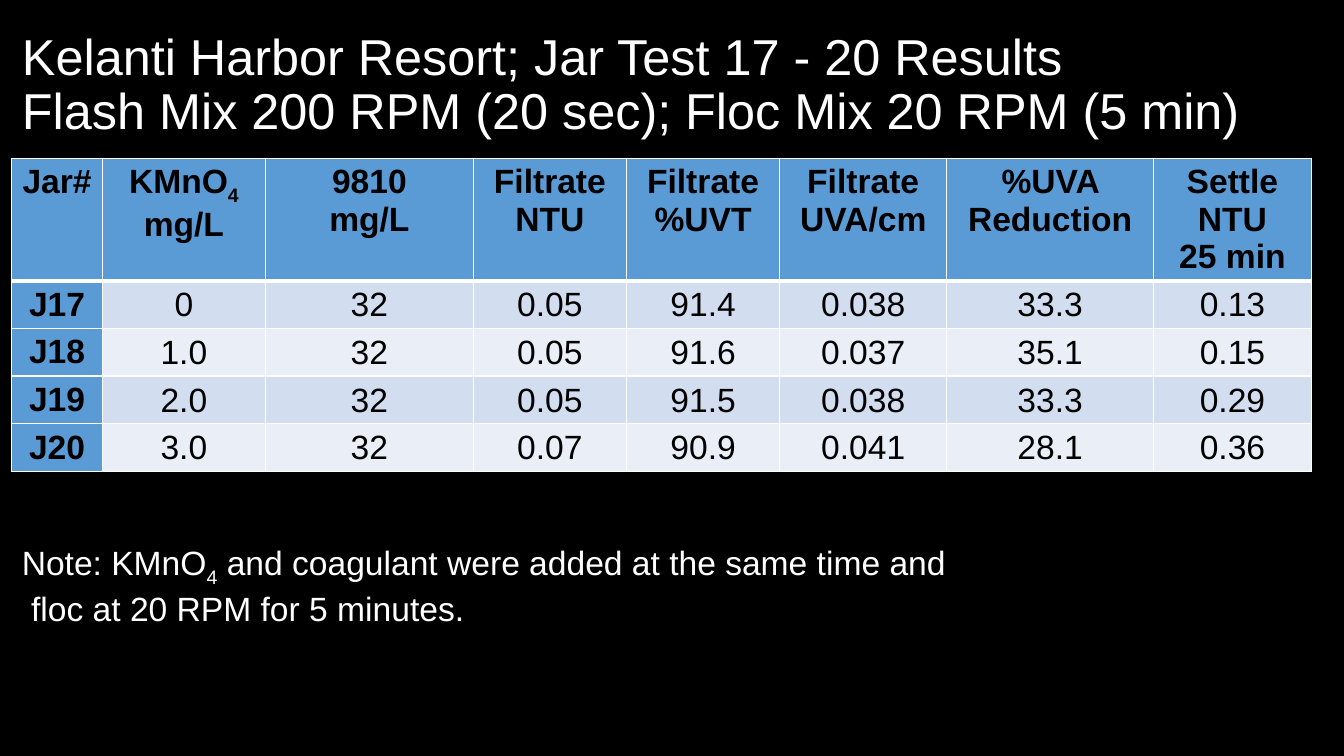
from copy import deepcopy

from lxml.etree import SubElement
from pptx import Presentation
from pptx.dml.color import RGBColor as RGB
from pptx.enum.text import MSO_ANCHOR as ANCHOR, MSO_AUTO_SIZE as AUTO, PP_ALIGN as ALIGN
from pptx.oxml.ns import qn
from pptx.util import Cm, Pt

COLORS = {"black": "000000", "white": "FFFFFF", "blue": "5B9BD5",
          "band_dark": "D2DEEF", "band_light": "EAEFF7"}
HEADERS = ["Jar#", "KMnO|4|\nmg/L", "9810\nmg/L", "Filtrate\nNTU", "Filtrate\n%UVT",
           "Filtrate\nUVA/cm", "%UVA Reduction", "Settle\nNTU\n25 min"]
RESULTS = [
    ["J17", "0", "32", "0.05", "91.4", "0.038", "33.3", "0.13"],
    ["J18", "1.0", "32", "0.05", "91.6", "0.037", "35.1", "0.15"],
    ["J19", "2.0", "32", "0.05", "91.5", "0.038", "33.3", "0.29"],
    ["J20", "3.0", "32", "0.07", "90.9", "0.041", "28.1", "0.36"],
]
COL_WIDTHS = [2.28, 4.11, 5.24, 3.86, 3.86, 4.21, 5.21, 3.98]
HEADER_HEIGHT, ROW_HEIGHT = 3.08, 1.2
LEFT = 0.3


def write(tf, text, color, size=24, bold=False, align=ALIGN.LEFT):
    """Write one paragraph per line; text between bars becomes subscript."""
    for i, line in enumerate(text.split("\n")):
        p = tf.paragraphs[0] if i == 0 else tf.add_paragraph()
        p.alignment = align
        for j, part in enumerate(line.split("|")):
            r = p.add_run()
            r.text = part
            for name, value in {"name": "Arial", "size": Pt(size), "bold": bold}.items():
                setattr(r.font, name, value)
            r.font.color.rgb = RGB.from_string(COLORS[color])
            if j % 2:
                r.font._element.set("baseline", "-25000")


def add_borders(cell, widths):
    """Draw white cell borders, given widths in points by side."""
    tcPr = cell._tc.get_or_add_tcPr()
    for side, width in widths.items():
        ln = SubElement(tcPr, qn(f"a:ln{side}"), w=str(Pt(width)))
        fill = SubElement(ln, qn("a:solidFill"))
        SubElement(fill, qn("a:srgbClr"), val=COLORS["white"])


prs = Presentation()
prs.slide_width, prs.slide_height = Cm(33.87), Cm(19.05)
s = prs.slides.add_slide(prs.slide_layouts[5])
s.background.fill.solid()
s.background.fill.fore_color.rgb = RGB.from_string(COLORS["black"])

# Title
title = s.shapes.title
title.left, title.top, title.width, title.height = Cm(LEFT), Cm(0.33), Cm(33.1), Cm(3.68)
tf = title.text_frame
tf.auto_size, tf.vertical_anchor, tf.word_wrap = AUTO.NONE, ANCHOR.MIDDLE, True
write(tf, "Kelanti Harbor Resort; Jar Test 17 - 20 Results", "white", 36)
p = tf.paragraphs[0]
p.line_spacing = 0.9
p.add_line_break()
write(tf, "Flash Mix 200 RPM (20 sec); Floc Mix 20 RPM (5 min)", "white", 36)
line_break = p._p.find(qn("a:br"))
line_break.append(deepcopy(p.runs[0].font._element))

# Results table
rows = [HEADERS] + RESULTS
table = s.shapes.add_table(len(rows), len(HEADERS), Cm(LEFT), Cm(3.99), Cm(sum(COL_WIDTHS)),
                           Cm(HEADER_HEIGHT + ROW_HEIGHT * len(RESULTS))).table
table.first_col = True
for column, width in zip(table.columns, COL_WIDTHS):
    column.width = Cm(width)
for i, values in enumerate(rows):
    table.rows[i].height = Cm(ROW_HEIGHT if i else HEADER_HEIGHT)
    for j, value in enumerate(values):
        cell = table.cell(i, j)
        heading = i == 0 or j == 0
        add_borders(cell, {"L": 1, "R": 1, "T": 3 if i == 1 else 1, "B": 3 if i == 0 else 1})
        cell.fill.solid()
        fill = "blue" if heading else "band_dark" if i % 2 else "band_light"
        cell.fill.fore_color.rgb = RGB.from_string(COLORS[fill])
        if not heading:
            cell.vertical_anchor = ANCHOR.MIDDLE
            cell.margin_left = cell.margin_right = cell.margin_top = Cm(0.03)
            cell.margin_bottom = 0
        write(cell.text_frame, value, "black", bold=heading, align=ALIGN.CENTER)

# Note
note = s.shapes.add_textbox(Cm(LEFT), Cm(13.54), Cm(24.08), Cm(2.31))
tf = note.text_frame
tf.word_wrap, tf.auto_size = False, AUTO.SHAPE_TO_FIT_TEXT
write(tf, "Note: KMnO|4| and coagulant were added at the same time and\n"
          " floc at 20 RPM for 5 minutes.", "white")

prs.save("out.pptx")
